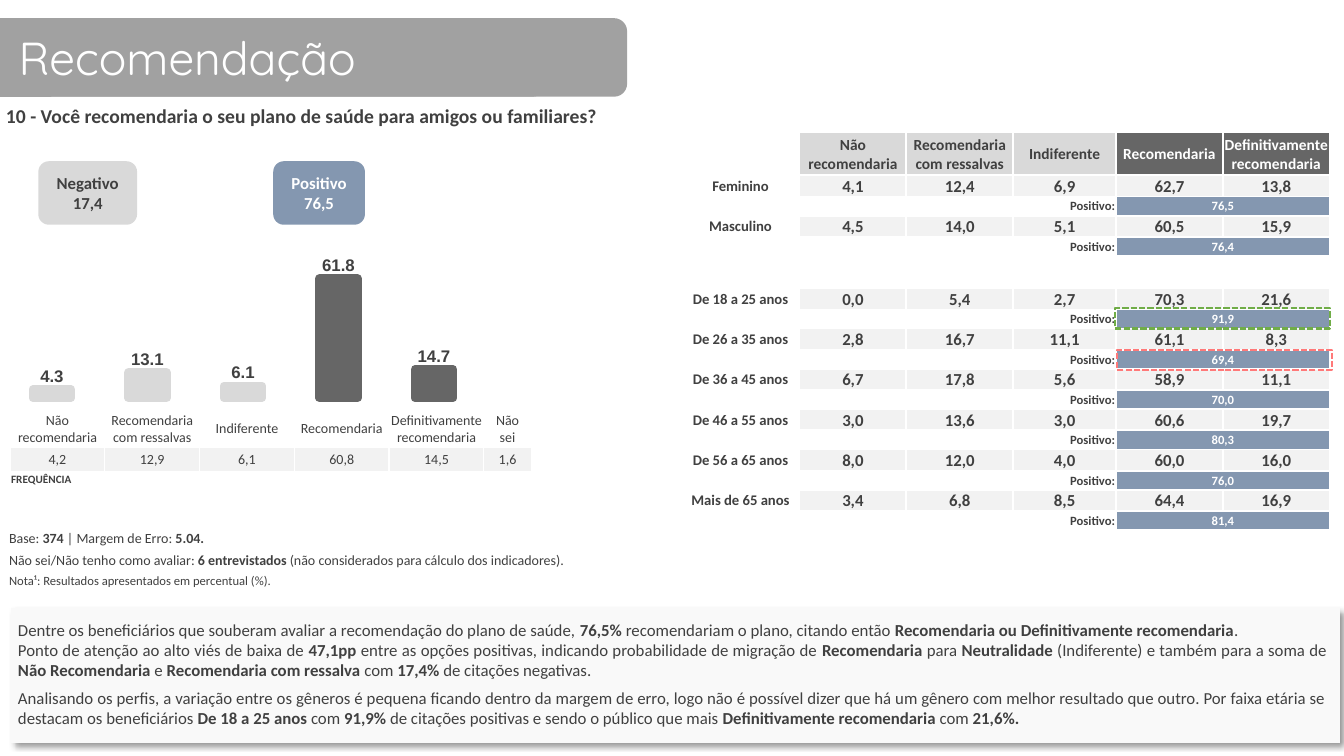
from lxml import etree
from pptx import Presentation
from pptx.chart.data import CategoryChartData
from pptx.dml.color import RGBColor
from pptx.enum.chart import XL_CHART_TYPE, XL_LABEL_POSITION
from pptx.enum.dml import MSO_LINE
from pptx.enum.shapes import MSO_SHAPE
from pptx.enum.text import MSO_ANCHOR, PP_ALIGN
from pptx.oxml import parse_xml
from pptx.oxml.ns import nsdecls, qn
from pptx.util import Inches, Pt

LEFT, CENTER, RIGHT, JUSTIFY = PP_ALIGN.LEFT, PP_ALIGN.CENTER, PP_ALIGN.RIGHT, PP_ALIGN.JUSTIFY
TOP, MIDDLE = MSO_ANCHOR.TOP, MSO_ANCHOR.MIDDLE
RECT, ROUNDED = MSO_SHAPE.RECTANGLE, MSO_SHAPE.ROUNDED_RECTANGLE
COLUMNS, OUTSIDE = XL_CHART_TYPE.COLUMN_CLUSTERED, XL_LABEL_POSITION.OUTSIDE_END
SYS_DASH = MSO_LINE.SQUARE_DOT
INK, WHITE, LIGHT, DARK, BAND, BLUE = "404040", "FFFFFF", "D9D9D9", "666666", "F2F2F2", "8497B0"
PLAIN_TABLE = "{2D5ABB26-0587-4C30-8999-92F81FD0307C}"

ANSWERS = ["Não recomendaria", "Recomendaria com ressalvas", "Indiferente",
           "Recomendaria", "Definitivamente recomendaria"]
FREQUENCIES = ["4,2", "12,9", "6,1", "60,8", "14,5", "1,6"]
PROFILES = [
    ("Feminino", "4,1 12,4 6,9 62,7 13,8", "76,5"),
    ("Masculino", "4,5 14,0 5,1 60,5 15,9", "76,4"),
    None,
    ("De 18 a 25 anos", "0,0 5,4 2,7 70,3 21,6", "91,9"),
    ("De 26 a 35 anos", "2,8 16,7 11,1 61,1 8,3", "69,4"),
    ("De 36 a 45 anos", "6,7 17,8 5,6 58,9 11,1", "70,0"),
    ("De 46 a 55 anos", "3,0 13,6 3,0 60,6 19,7", "80,3"),
    ("De 56 a 65 anos", "8,0 12,0 4,0 60,0 16,0", "76,0"),
    ("Mais de 65 anos", "3,4 6,8 8,5 64,4 16,9", "81,4"),
]
NOTES = [
    ("Base: **374 **| Margem de Erro: **5.04.**", 10),
    ("Não sei/Não tenho como avaliar:** 6 entrevistados** (não considerados para cálculo dos indicadores).", 10),
    ("Nota¹: Resultados apresentados em percentual (%).", 9),
]
ANALYSIS = [
    ("Dentre os beneficiários que souberam avaliar a recomendação do plano de saúde, **76,5% **recomendariam "
     "o plano, citando então **Recomendaria ou Definitivamente recomendaria**.", 0),
    ("Ponto de atenção ao alto viés de baixa de **47,1pp **entre as opções positivas, indicando probabilidade "
     "de migração de **Recomendaria **para **Neutralidade** (Indiferente) e também para a soma de "
     "**Não Recomendaria **e** Recomendaria com ressalva **com **17,4% **de citações negativas.", 0),
    ("Analisando os perfis, a variação entre os gêneros é pequena ficando dentro da margem de erro, logo não é "
     "possível dizer que há um gênero com melhor resultado que outro. Por faixa etária se destacam os "
     "beneficiários **De 18 a 25 anos **com **91,9% **de citações positivas e sendo o público que mais "
     "**Definitivamente recomendaria** com **21,6%.**", 5),
]


def rgb(value):
    return RGBColor.from_string(value)


def inches(box):
    return [Inches(length) for length in box]


def write(paragraph, text, size, color=INK, bold=False, align=LEFT, font="Calibri"):
    paragraph.alignment = align
    for order, piece in enumerate(text.split("**")):
        if piece:
            run = paragraph.add_run()
            run.text = piece
            run.font.size, run.font.name = Pt(size), font
            run.font.bold = bold or order % 2 == 1
            run.font.color.rgb = rgb(color)


def add_panel(slide, box, kind, fill=None):
    panel = slide.shapes.add_shape(kind, *inches(box))
    panel.shadow.inherit = False
    panel.line.fill.background()
    if fill:
        panel.fill.solid()
        panel.fill.fore_color.rgb = rgb(fill)
    else:
        panel.fill.background()
    panel.text_frame.word_wrap = True
    panel.text_frame.vertical_anchor = MIDDLE
    return panel


def add_text_area(slide, box):
    frame = slide.shapes.add_textbox(*inches(box)).text_frame
    frame.word_wrap = True
    return frame


def add_grid(slide, left, top, widths, heights):
    grid = slide.shapes.add_table(len(heights), len(widths),
                                  *inches((left, top, sum(widths), sum(heights)))).table
    grid.first_row = grid.horz_banding = False
    grid._tbl.tblPr.find(qn("a:tableStyleId")).text = PLAIN_TABLE
    for column, width in zip(grid.columns, widths):
        column.width = Inches(width)
    for row, height in zip(grid.rows, heights):
        row.height = Inches(height)
    for cell in grid.iter_cells():
        cell.margin_left = cell.margin_right = cell.margin_top = Inches(0.01)
        cell.margin_bottom = 0
        cell.fill.background()
        etree.SubElement(cell.text_frame.paragraphs[0]._p, qn("a:endParaRPr"), sz="800")
    return grid


def fill_cell(cell, text, size, color=INK, bold=False, align=CENTER, fill=None, anchor=MIDDLE):
    cell.vertical_anchor = anchor
    if fill:
        cell.fill.solid()
        cell.fill.fore_color.rgb = rgb(fill)
    for order, line in enumerate(text.split("\n")):
        paragraph = cell.text_frame.add_paragraph() if order else cell.text_frame.paragraphs[0]
        write(paragraph, line, size, color, bold, align)


def border_cell(cell, points):
    for order, side in enumerate(("lnL", "lnR", "lnT", "lnB")):
        cell._tc.get_or_add_tcPr().insert(order, parse_xml(
            f'<a:{side} {nsdecls("a")} w="{Pt(points)}"><a:solidFill><a:srgbClr val="{WHITE}"/>'
            f'</a:solidFill></a:{side}>'))


def build_heading(slide, left, top):
    add_panel(slide, (left - 0.32, top, 6.49, 0.78), ROUNDED, "A1A1A1")
    title = add_panel(slide, (left, top, 5.36, 0.78), ROUNDED, "A1A1A1")
    write(title.text_frame.paragraphs[0], "Recomendação", 33, WHITE, font="Quicksand")
    question = add_text_area(slide, (left - 0.1, top + 0.79, 13.33, 0.35))
    question.margin_left = question.margin_right = Inches(0.11)
    question.margin_top = question.margin_bottom = Inches(0.06)
    write(question.paragraphs[0], "10 - Você recomendaria o seu plano de saúde para amigos ou familiares?",
          14, bold=True)


def build_totals(slide, top):
    for left, width, total, fill, color in ((0.38, 0.98, "Negativo 17,4", LIGHT, INK),
                                            (2.71, 0.91, "Positivo 76,5", BLUE, WHITE)):
        badge = add_panel(slide, (left, top, width, 0.63), ROUNDED, fill)
        write(badge.text_frame.paragraphs[0], total, 12, color, True, CENTER)


def build_chart(slide, box):
    data = CategoryChartData(number_format="0.0")
    data.categories = ["1", "2", "3", "4", "5"]
    data.add_series("Series 1", (14.7, 61.8, 6.1, 13.1, 4.3))
    chart = slide.shapes.add_chart(COLUMNS, *inches(box), data).chart
    chart.has_legend = chart.has_title = False
    chart.font.name, chart.font.size, chart.font.color.rgb = "Arial", Pt(10), rgb("000000")
    chart.category_axis.reverse_order = True
    chart.category_axis.visible = chart.value_axis.visible = False
    chart.value_axis.has_major_gridlines = False
    chart.value_axis.minimum_scale, chart.value_axis.maximum_scale = 0, 70
    plot = chart.plots[0]
    plot.vary_by_categories = False
    plot.gap_width, plot.overlap = 150, -25
    bars = plot.series[0]
    bars.format.fill.solid()
    bars.format.fill.fore_color.rgb = rgb("808080")
    for order, color in enumerate((DARK, DARK, LIGHT, LIGHT, LIGHT)):
        bar = bars.points[order].format
        bar.fill.solid()
        bar.fill.fore_color.rgb = rgb(color)
        bar.line.color.rgb = rgb(color)
        bar.line.width = Pt(6)
        etree.SubElement(bar.line._ln, qn("a:round"))
    labels = bars.data_labels
    labels.show_value, labels.position = True, OUTSIDE
    labels.number_format, labels.number_format_is_linked = "0.0", False
    labels.font.name, labels.font.size, labels.font.bold = "Arial", Pt(12), True
    labels.font.color.rgb = rgb(INK)
    area = chart._chartSpace.chart.plotArea
    for old in area.findall(qn("c:layout")):
        area.remove(old)
    settings = (("layoutTarget", "inner"), ("xMode", "edge"), ("yMode", "edge"),
                ("x", 0.03), ("y", 0.09), ("w", 0.94), ("h", 0.72))
    layout = "".join(f'<c:{key} val="{value}"/>' for key, value in settings)
    area.insert(0, parse_xml(f'<c:layout {nsdecls("c")}><c:manualLayout>{layout}</c:manualLayout></c:layout>'))


def build_frequencies(slide, left, top):
    grid = add_grid(slide, left, top, [0.94] * 5 + [0.47], [0.38, 0.24, 0.24])
    for column, (answer, frequency) in enumerate(zip(ANSWERS + ["Não\nsei"], FREQUENCIES)):
        fill_cell(grid.cell(0, column), answer, 10)
        fill_cell(grid.cell(1, column), frequency, 10, fill=BAND)
    grid.cell(2, 0).merge(grid.cell(2, 5))
    fill_cell(grid.cell(2, 0), "FREQUÊNCIA", 8, bold=True, align=LEFT, anchor=TOP)
    for cell in grid.iter_cells():
        border_cell(cell, 1)


def build_notes(slide, left, top):
    grid = add_grid(slide, left, top, [6.54], [0.22, 0.21, 0.21])
    for row, (note, size) in enumerate(NOTES):
        fill_cell(grid.cell(row, 0), note, size, align=LEFT, anchor=TOP)


def build_profiles(slide, left, top):
    heights = [0.43]
    for profile in PROFILES:
        heights += [0.19, 0.19] if profile else [0.32]
    grid = add_grid(slide, left, top, [1.17, 1.06, 1.06, 1.02, 1.06, 1.06], heights)
    for column, answer in enumerate(ANSWERS, 1):
        fill, color = (DARK, WHITE) if column > 3 else (LIGHT, INK)
        fill_cell(grid.cell(0, column), answer, 11, color, True, fill=fill)
    row = 1
    for profile in PROFILES:
        if profile:
            label, shares, positive = profile
            fill_cell(grid.cell(row, 0), label, 10.5, bold=True)
            for column, share in enumerate(shares.split(), 1):
                fill_cell(grid.cell(row, column), share, 12, bold=True, fill=BAND)
            fill_cell(grid.cell(row + 1, 3), "Positivo:", 9, bold=True, align=RIGHT)
            grid.cell(row + 1, 4).merge(grid.cell(row + 1, 5))
            fill_cell(grid.cell(row + 1, 4), positive, 9, WHITE, True, fill=BLUE)
        row += 2 if profile else 1
    for row in range(len(heights)):
        for column in range(1, 6):
            border_cell(grid.cell(row, column), 1.5)
    for offset_x, offset_y, color in ((4.3, 1.75, "70AD47"), (4.32, 2.16, "FF7979")):
        highlight = add_panel(slide, (left + offset_x, top + offset_y, 2.13, 0.2), RECT)
        highlight.line.color.rgb = rgb(color)
        highlight.line.width, highlight.line.dash_style = Pt(1.5), SYS_DASH


def build_analysis(slide, left, top):
    card = add_panel(slide, (left, top, 13.18, 1.34), RECT, "F9F9F9")
    card._element.spPr.find(qn("a:effectLst")).append(parse_xml(
        f'<a:outerShdw {nsdecls("a")} blurRad="{Pt(4)}" dist="{Pt(3)}" dir="2700000" algn="tl" '
        'rotWithShape="0"><a:srgbClr val="000000"><a:alpha val="40000"/></a:srgbClr></a:outerShdw>'))
    frame = add_text_area(slide, (left - 0.03, top + 0.07, 13.18, 1.18))
    for order, (text, space) in enumerate(ANALYSIS):
        paragraph = frame.add_paragraph() if order else frame.paragraphs[0]
        if space:
            paragraph.space_before = Pt(space)
        write(paragraph, text, 12, align=JUSTIFY)


def main():
    deck = Presentation()
    deck.slide_width, deck.slide_height = Inches(13.33), Inches(7.5)
    slide = deck.slides.add_slide(deck.slide_layouts[6])
    build_heading(slide, 0.05, 0.18)
    build_analysis(slide, 0.11, 6.03)
    build_totals(slide, 1.6)
    build_frequencies(slide, 0.1, 4.06)
    build_notes(slide, 0.08, 5.25)
    build_profiles(slide, 6.76, 1.31)
    build_chart(slide, (-0.11, 2.44, 5.04, 1.86))
    deck.save("out.pptx")


if __name__ == "__main__":
    main()
